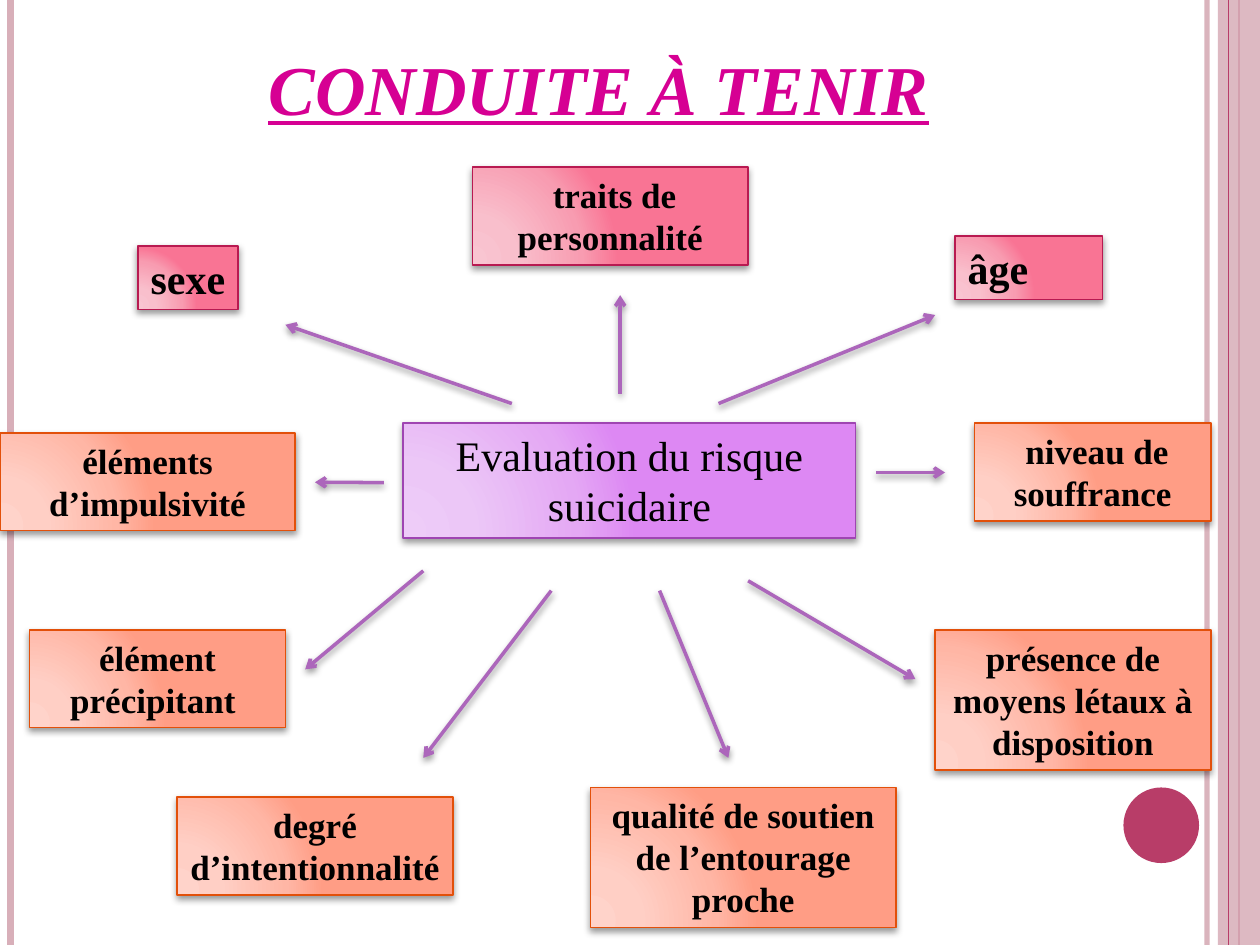
from lxml import etree
from pptx import Presentation
from pptx.dml.color import RGBColor
from pptx.enum.shapes import MSO_CONNECTOR, MSO_SHAPE
from pptx.enum.text import MSO_ANCHOR, MSO_AUTO_SIZE, PP_ALIGN
from pptx.oxml.ns import qn
from pptx.util import Pt

RECT, OVAL = MSO_SHAPE.RECTANGLE, MSO_SHAPE.OVAL
LINE = MSO_CONNECTOR.STRAIGHT
LEFT, MID = PP_ALIGN.LEFT, PP_ALIGN.CENTER
TOP, FIXED = MSO_ANCHOR.TOP, MSO_AUTO_SIZE.NONE

FONT = "Times New Roman"
BLACK = RGBColor(0, 0, 0)
PINK = RGBColor(0xD6, 0x00, 0x93)
ROSE = RGBColor(0xD8, 0xAF, 0xB9)
WINE = RGBColor(0xB8, 0x3D, 0x68)
MAUVE = RGBColor(0xAC, 0x66, 0xBB)
PURPLE = (RGBColor(0x9F, 0x45, 0xB2), ("EECCF8", "ECC7F7", "E4A8F4", "DD88F3"))
RED = (RGBColor(0xB8, 0x1A, 0x51), ("F9C5D1", "F9BFCC", "F89CB1", "F97494"))
ORANGE = (RGBColor(0xE2, 0x50, 0x0A), ("FFD3CA", "FFCFC5", "FFB6A5", "FF9D85"))
STOPS = (0, 30, 75, 100)
FOCUS = {"l": 5, "t": 100, "r": 120, "b": 10}


def add(node, tag, **attrs):
    return etree.SubElement(node, qn(tag), {k: str(v) for k, v in attrs.items()})


def fade(node, part):
    color = next(node.iter(qn("a:srgbClr")))
    add(color, "a:alpha", val=part * 1000)


def shade(shape):
    effects = add(shape._element.spPr, "a:effectLst")
    shadow = add(effects, "a:outerShdw", blurRad=Pt(4), dist=Pt(2),
                 dir=90 * 60000, rotWithShape=0)
    add(shadow, "a:srgbClr", val=BLACK)
    fade(shadow, 40)


def glow(shape, colors):
    shape.fill.gradient()
    grad = shape._element.spPr.find(qn("a:gradFill"))
    for child in list(grad):
        grad.remove(child)
    stops = add(grad, "a:gsLst")
    for pos, color in zip(STOPS, colors):
        add(add(stops, "a:gs", pos=pos * 1000), "a:srgbClr", val=color)
    sweep = add(grad, "a:path", path="circle")
    add(sweep, "a:fillToRect", **{k: v * 1000 for k, v in FOCUS.items()})


def write(shape, text, size=20, color=BLACK, align=MID, wrap=True,
          bold=True, italic=False, under=False):
    frame = shape.text_frame
    frame.word_wrap = wrap
    frame.auto_size = FIXED
    frame.vertical_anchor = TOP
    para = frame.paragraphs[0]
    para.alignment = align
    run = para.add_run()
    run.text = text
    font = run.font
    font.name, font.size, font.color.rgb = FONT, Pt(size), color
    font.bold, font.italic, font.underline = bold, italic, under


def place(shape, box):
    shape.left, shape.top, shape.width, shape.height = map(Pt, box)


def draw(slide, start, end, color, width):
    line = slide.shapes.add_connector(LINE, *map(Pt, (*start, *end)))
    line.line.color.rgb = color
    line.line.width = Pt(width)
    return line


def plain(slide, kind, box, color):
    shape = slide.shapes.add_shape(kind, *map(Pt, box))
    shape.shadow.inherit = False
    shape.fill.solid()
    shape.fill.fore_color.rgb = color
    shape.line.fill.background()
    return shape


def rails(slide, box):
    left, top, width, height = box

    def rail(x, color, size):
        line = draw(slide, (left + x, top), (left + x, top + height), color, size)
        add(line._element.spPr, "a:effectLst")
        return line

    fade(rail(689.8, ROSE, 3)._element.spPr, 93)
    rail(6, ROSE, 4.5)
    rail(708, WINE, 1.5)
    band = plain(slide, RECT, (left + 696, top, width - 696, height), ROSE)
    fade(band._element.spPr, 87)
    rail(702, WINE, 0.75)
    plain(slide, OVAL, (left + 642, top + 450, 43.2, 43.2), WINE)


def heading(slide, box):
    title = slide.shapes.title
    place(title, box)
    write(title, "CONDUITE À TENIR", size=40, color=PINK, align=LEFT,
          wrap=False, italic=True, under=True)


def card(slide, box, text, style, **form):
    edge, colors = style
    shape = slide.shapes.add_shape(RECT, *map(Pt, box))
    glow(shape, colors)
    shape.line.color.rgb = edge
    shape.line.width = Pt(1)
    shade(shape)
    write(shape, text, **form)


def arrow(slide, start, end):
    line = draw(slide, start, end, MAUVE, 2)
    add(line.line._get_or_add_ln(), "a:tailEnd", type="arrow")
    shade(line)


def wheel(slide, box):
    left, top = box[:2]
    cards = (
        ((230.4, 241.9, 258.5, 65.5), "Evaluation du risque suicidaire", PURPLE,
         {"size": 24, "bold": False}),
        ((545.8, 134.9, 84.3, 36.3), "âge", RED, {"size": 24, "align": LEFT}),
        ((78.7, 140.5, 57.5, 36.3), "sexe", RED, {"size": 24, "wrap": False}),
        ((270, 95.6, 157.5, 55.7), "\u00a0traits de personnalité", RED, {}),
        ((556.9, 241.9, 135, 55.7), "\u00a0niveau de souffrance", ORANGE, {}),
        ((101.3, 455.6, 157.5, 55.7), "degré d’intentionnalité", ORANGE, {}),
        ((0, 247.5, 168.7, 55.7), "éléments d’impulsivité", ORANGE, {}),
        ((16.8, 360, 146.3, 55.7), "élément précipitant\u00a0", ORANGE, {}),
        ((534.4, 360, 157.5, 80), "présence de moyens létaux à disposition",
         ORANGE, {}),
        ((337.5, 450, 174.4, 80), "qualité de soutien de l’entourage proche",
         ORANGE, {}),
    )
    for (x, y, w, h), text, style, form in cards:
        card(slide, (left + x, top + y, w, h), text, style, **form)

    spokes = (
        (354.4, 225, 354.4, 168.7),
        (292.5, 230.6, 163.1, 185.6),
        (410.6, 230.6, 534.4, 180),
        (500.6, 270, 540, 270),
        (219.4, 275.8, 180, 275.6),
        (427.5, 331.9, 523.1, 388.1),
        (376.9, 337.5, 416.2, 433.1),
        (315, 337.5, 241.9, 433.1),
        (241.9, 326.2, 174.4, 382.5),
    )
    for x1, y1, x2, y2 in spokes:
        arrow(slide, (left + x1, top + y1), (left + x2, top + y2))


def main():
    deck = Presentation()
    deck.slide_width, deck.slide_height = Pt(720), Pt(540)
    slide = deck.slides.add_slide(deck.slide_layouts[5])
    page = (0, 0, 720, 540)
    rails(slide, page)
    heading(slide, (146.2, 22.5, 396, 55.7))
    wheel(slide, page)
    deck.save("out.pptx")


if __name__ == "__main__":
    main()
